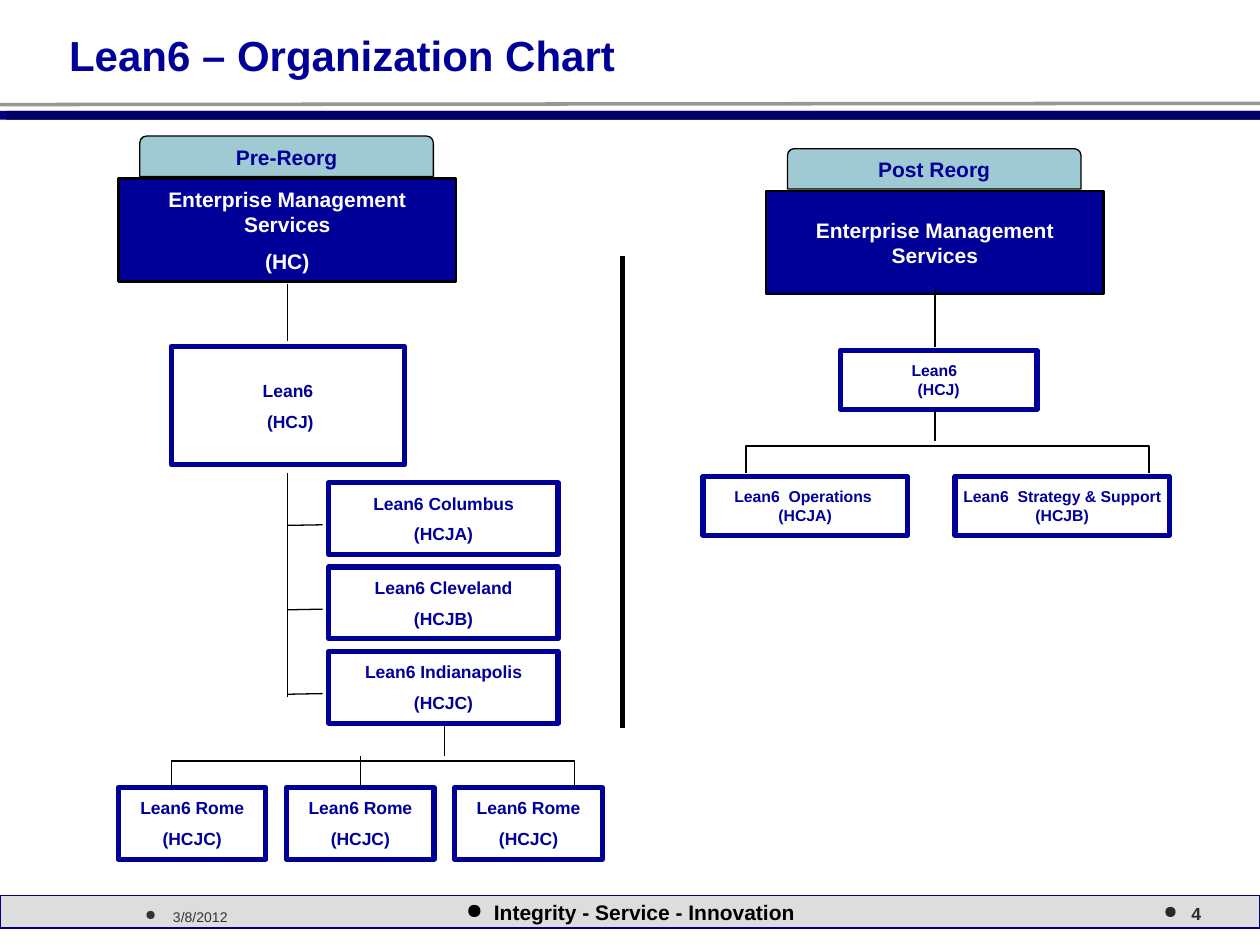
from pptx import Presentation
from pptx import util as u
from pptx.dml.color import RGBColor
from pptx.enum import shapes, text
from pptx.oxml.ns import qn
from lxml import etree

NAVY = RGBColor(0x00, 0x00, 0x99)
RULE_NAVY = RGBColor(0x00, 0x00, 0x80)
DEEP_NAVY = RGBColor(0x00, 0x00, 0x66)
TEAL = RGBColor(0x9F, 0xCA, 0xD3)
GREY = RGBColor(0x96, 0x96, 0x96)
PALE = RGBColor(0xDD, 0xDD, 0xDD)
DATE_GREY = RGBColor(0x33, 0x33, 0x33)
PAGE_GREY = RGBColor(0x29, 0x29, 0x29)
BLACK = RGBColor(0x00, 0x00, 0x00)
WHITE = RGBColor(0xFF, 0xFF, 0xFF)

COLS, ROWS = 100, 75
LEFT, CENTER, RIGHT = text.PP_ALIGN.LEFT, text.PP_ALIGN.CENTER, text.PP_ALIGN.RIGHT
TOP, MIDDLE, BOTTOM = text.MSO_ANCHOR.TOP, text.MSO_ANCHOR.MIDDLE, text.MSO_ANCHOR.BOTTOM
RECT = shapes.MSO_SHAPE.RECTANGLE
TAB = shapes.MSO_SHAPE.ROUND_2_SAME_RECTANGLE


class Deck:
    """Style, current slide and one method per kind of element."""
    font = "Arial"

    def __init__(self):
        self.prs = Presentation()
        self.prs.slide_width, self.prs.slide_height = u.Inches(10), u.Inches(7.5)
        self.s = self.prs.slides.add_slide(self.prs.slide_layouts[6])

    def x(self, col):
        return round(self.prs.slide_width * col / COLS)

    def y(self, row):
        return round(self.prs.slide_height * row / ROWS)

    def place(self, col, row, w, h):
        return self.x(col), self.y(row), self.x(w), self.y(h)

    def add_text(self, sp, lines, size, color, align=CENTER, anchor=MIDDLE,
                 bold=True, gap=0, side=0.1, bullet=False):
        tf = sp.text_frame
        tf.word_wrap = True
        tf.vertical_anchor = anchor
        tf.margin_left = tf.margin_right = u.Inches(side)
        tf.margin_top = tf.margin_bottom = u.Inches(0.05)
        for i, line in enumerate(lines):
            p = tf.paragraphs[0] if i == 0 else tf.add_paragraph()
            p.alignment = align
            if i:
                p.space_before = u.Pt(gap * size)
            if bullet:
                pPr = p._p.get_or_add_pPr()
                pPr.set("marL", str(u.Inches(0.22)))
                pPr.set("indent", str(-u.Inches(0.22)))
                etree.SubElement(pPr, qn("a:buChar")).set("char", "●")
            r = p.add_run()
            r.text = line
            r.font.name, r.font.size, r.font.bold = self.font, u.Pt(size), bold
            r.font.color.rgb = color

    def label(self, at, line, size, color, **style):
        self.add_text(self.s.shapes.add_textbox(*self.place(*at)), [line], size, color, **style)

    def box(self, at, fill=None, line=None, width=0.75, kind=RECT):
        sp = self.s.shapes.add_shape(kind, *self.place(*at))
        sp.shadow.inherit = False
        self.paint(sp, fill, line, width)
        return sp

    def paint(self, sp, fill, line, width):
        if fill is None:
            sp.fill.background()
        else:
            sp.fill.solid()
            sp.fill.fore_color.rgb = fill
        if line is None:
            sp.line.fill.background()
        else:
            sp.line.color.rgb, sp.line.width = line, u.Pt(width)

    def unit(self, at, lines, size=10, gap=0.56):
        self.add_text(self.box(at, line=NAVY, width=3), lines, size, NAVY, gap=gap, side=0)

    def head(self, col, row, title, lines):
        """Tab with the department box below it."""
        tab = self.box((col + 1.7, row, 23.3, 3.2), TEAL, BLACK, kind=TAB)
        self.add_text(tab, [title], 12, NAVY, anchor=TOP)
        dept = self.box((col, row + 3.35, 26.8, 8.2), NAVY, BLACK, 1.5)
        self.add_text(dept, lines, 12, WHITE, gap=0.56)

    def line(self, x1, y1, x2, y2, color=BLACK, width=0.75):
        c = self.s.shapes.add_connector(shapes.MSO_CONNECTOR.STRAIGHT,
                                        self.x(x1), self.y(y1), self.x(x2), self.y(y2))
        c.line.color.rgb, c.line.width = color, u.Pt(width)
        etree.SubElement(c._element.spPr, qn("a:effectLst"))

    def bracket(self, left, right, top, bottom):
        fb = self.s.shapes.build_freeform(self.x(left), self.y(bottom))
        fb.add_line_segments([(self.x(a), self.y(b)) for a, b in
                              ((left, top), (right, top), (right, bottom))], close=False)
        sp = fb.convert_to_shape()
        sp.shadow.inherit = False
        self.paint(sp, None, BLACK, 0.75)


def main():
    d = Deck()

    # Header rules and title
    d.line(100, 8.2, 0, 8.3, GREY, 2)
    d.box((0, 8.8, 100, 0.7), RULE_NAVY)
    d.box((0.5, 8.8, 99.5, 0.7), DEEP_NAVY)
    d.label((4.5, 2, 80.6, 4.7), "Lean6 – Organization Chart", 24, NAVY, align=LEFT)

    # Footer
    d.box((0, 71.1, 100, 2.6), PALE, RULE_NAVY)
    for row in (71.1, 73.6):
        d.line(0, row, 100, row, RULE_NAVY)
    foot = dict(anchor=BOTTOM, bullet=True)
    d.label((4.4, 71, 20.8, 2.9), "3/8/2012", 8, DATE_GREY, bold=False, **foot)
    d.label((34.2, 70.9, 31.7, 3), "Integrity - Service - Innovation", 12, BLACK, **foot)
    d.label((75.5, 71, 20.8, 2.8), "4", 10, PAGE_GREY, align=RIGHT, **foot)

    # Before the reorganization
    d.head(9.4, 10.8, "Pre-Reorg", ["Enterprise Management Services", "(HC)"])
    d.line(22.8, 22.5, 22.8, 27.1)
    d.unit((13.6, 27.5, 18.5, 9.4), ["Lean6", " (HCJ)"])

    # City units hang off one trunk
    d.line(22.8, 37.5, 22.8, 55.3)
    cities = (("Columbus", "(HCJA)"), ("Cleveland", "(HCJB)"), ("Indianapolis", "(HCJC)"))
    for i, (city, code) in enumerate(cities):
        row = 38.3 + 6.7 * i
        d.unit((26.1, row, 18.2, 5.7), [f"Lean6 {city}", code])
        d.line(22.8, row + 3.4, 25.6, row + 3.35)

    # Rome units
    for i in range(3):
        d.unit((9.4 + 13.35 * i, 62.5, 11.7, 5.7), ["Lean6 Rome", "(HCJC)"])
    d.line(35.3, 57.5, 35.3, 60)
    d.bracket(13.6, 45.6, 60.4, 62.5)
    d.line(28.6, 60, 28.6, 62.5)

    # Divider
    d.line(49.4, 20.3, 49.4, 57.8, width=3)

    # After the reorganization
    d.head(60.8, 11.8, "Post Reorg", ["Enterprise Management Services"])
    for at, lines in (((66.7, 27.8, 15.6, 4.7), ["Lean6  ", "(HCJ)"]),
                      ((55.8, 37.8, 16.2, 4.7), ["Lean6  Operations ", "(HCJA)"]),
                      ((75.8, 37.8, 17, 4.7), ["Lean6  Strategy & Support", "(HCJB)"])):
        d.unit(at, lines, size=9, gap=0)
    d.line(74.2, 22.8, 74.2, 27.5)
    d.line(74.2, 32.5, 74.2, 35)
    d.bracket(59.2, 91.2, 35.4, 37.5)

    d.prs.save("out.pptx")


if __name__ == "__main__":
    main()
